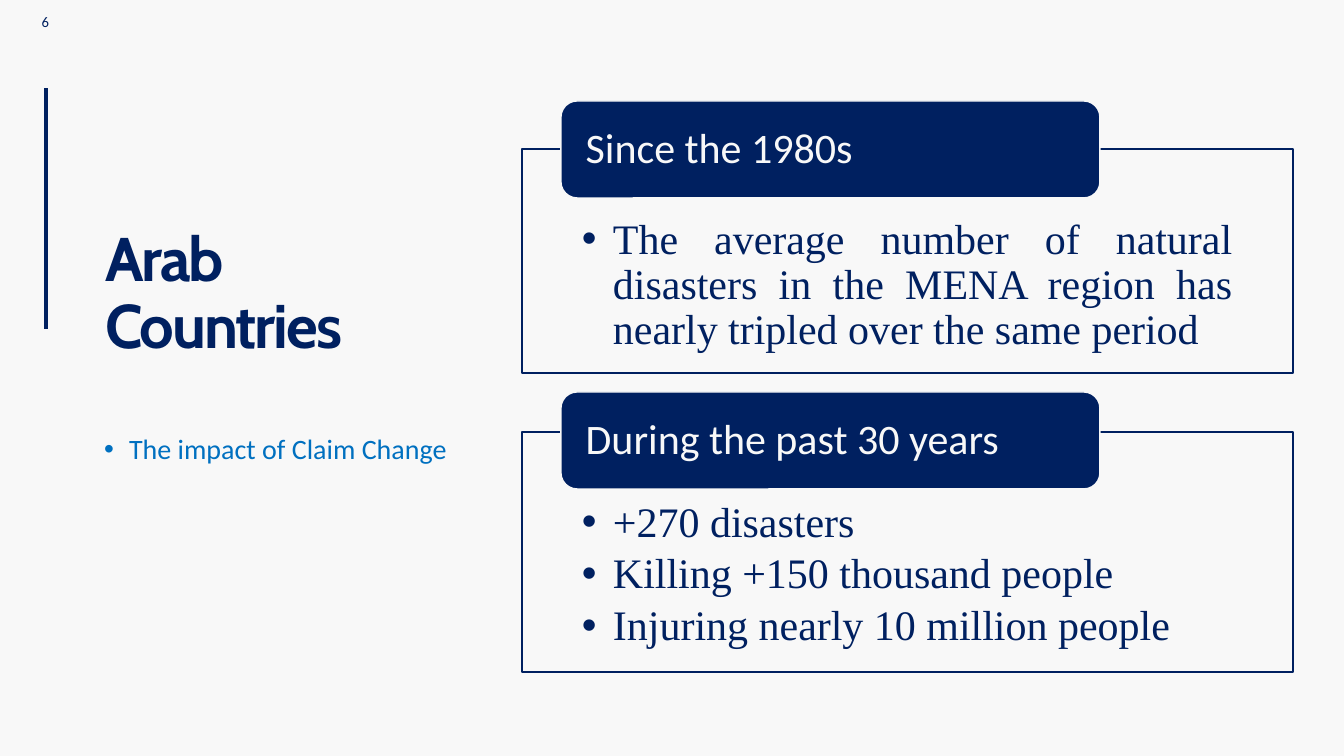
from lxml import etree
from pptx import Presentation
from pptx.dml.color import RGBColor
from pptx.enum.shapes import MSO_CONNECTOR, MSO_SHAPE
from pptx.enum.text import MSO_ANCHOR, PP_ALIGN
from pptx.oxml.ns import qn
from pptx.util import Emu, Pt

PX = 914400 / 100.8
COLORS = {"bg": "F8F8F8", "navy": "002060", "blue": "0070C0"}
TOP, MIDDLE = MSO_ANCHOR.TOP, MSO_ANCHOR.MIDDLE
LEFT, CENTER, JUSTIFY = PP_ALIGN.LEFT, PP_ALIGN.CENTER, PP_ALIGN.JUSTIFY
RECT, ROUNDED = MSO_SHAPE.RECTANGLE, MSO_SHAPE.ROUNDED_RECTANGLE


def px(n):
    return Emu(round(n * PX))


def write(sp, lines, font, size, color, align=LEFT, anchor=TOP,
          insets=(10, 5, 10, 5), indent=0, spacing=0.9, after=0):
    """Fill a shape with paragraphs; an indent in px makes them bulleted."""
    tf = sp.text_frame
    tf.word_wrap = True
    tf.vertical_anchor = anchor
    tf.margin_left, tf.margin_top, tf.margin_right, tf.margin_bottom = map(px, insets)
    tf.text = "\n".join(lines)
    for p in tf.paragraphs:
        p.alignment = align
        p.line_spacing = spacing
        p.space_after = Pt(after)
        if indent:
            pPr = p._p.get_or_add_pPr()
            pPr.set("marL", str(px(indent)))
            pPr.set("indent", str(-px(indent)))
            etree.SubElement(pPr, qn("a:buFont")).set("typeface", "Arial")
            etree.SubElement(pPr, qn("a:buChar")).set("char", "•")
        for r in p.runs:
            r.font.name = font
            r.font.size = Pt(size)
            r.font.color.rgb = RGBColor.from_string(COLORS[color])


prs = Presentation()
prs.slide_width, prs.slide_height = px(1344), px(756)
s = prs.slides.add_slide(prs.slide_layouts[6])
s.background.fill.solid()
s.background.fill.fore_color.rgb = RGBColor.from_string(COLORS["bg"])

# Accent line and slide number
accent = s.shapes.add_connector(MSO_CONNECTOR.STRAIGHT, px(46), px(329), px(46), px(88))
accent.line.color.rgb = RGBColor.from_string(COLORS["navy"])
accent.line.width = Pt(3)
etree.SubElement(accent._element.spPr, qn("a:effectLst"))

number = s.shapes.add_textbox(px(17), px(8), px(57), px(27))
write(number, ["6"], "Calibri", 10.5, "navy", align=CENTER, spacing=1)

# Title and subtitle
title = s.shapes.add_textbox(px(95), px(169), px(383), px(252))
write(title, ["Arab Countries"], "Cabin", 44, "navy", anchor=MIDDLE, insets=(10, 5, 25, 5))
title_run = title.text_frame.paragraphs[0].runs[0]
title_run.font.bold = True
title_run.font._element.set("spc", "-150")

subtitle = s.shapes.add_textbox(px(94), px(430), px(383), px(232))
write(subtitle, ["The impact of Claim Change"], "Calibri", 20, "blue", indent=25)

# Framed sections, each with a heading tab over its top edge
sections = [
    (149, 224, 101, "Since the 1980s",
     ["The average number of natural disasters in the MENA region "
      "has nearly tripled over the same period"]),
    (432, 240, 392, "During the past 30 years",
     ["+270 disasters", "Killing +150 thousand people",
      "Injuring nearly 10 million people"]),
]
for frame_top, frame_height, tab_top, heading, bullets in sections:
    frame = s.shapes.add_shape(RECT, px(522), px(frame_top), px(771), px(frame_height))
    tab = s.shapes.add_shape(ROUNDED, px(561), px(tab_top), px(539), px(97))
    for sp, fill, line in ((frame, "bg", "navy"), (tab, "navy", "bg")):
        sp.shadow.inherit = False
        sp.fill.solid()
        sp.fill.fore_color.rgb = RGBColor.from_string(COLORS[fill])
        sp.line.color.rgb = RGBColor.from_string(COLORS[line])
        sp.line.width = Pt(1)
    write(frame, bullets, "Times New Roman", 30, "navy", align=JUSTIFY,
          insets=(60, 69, 60, 23), indent=31, after=4.5)
    write(tab, [heading], "Calibri", 30, "bg", anchor=MIDDLE, insets=(20, 0, 20, 0))

prs.save("out.pptx")
